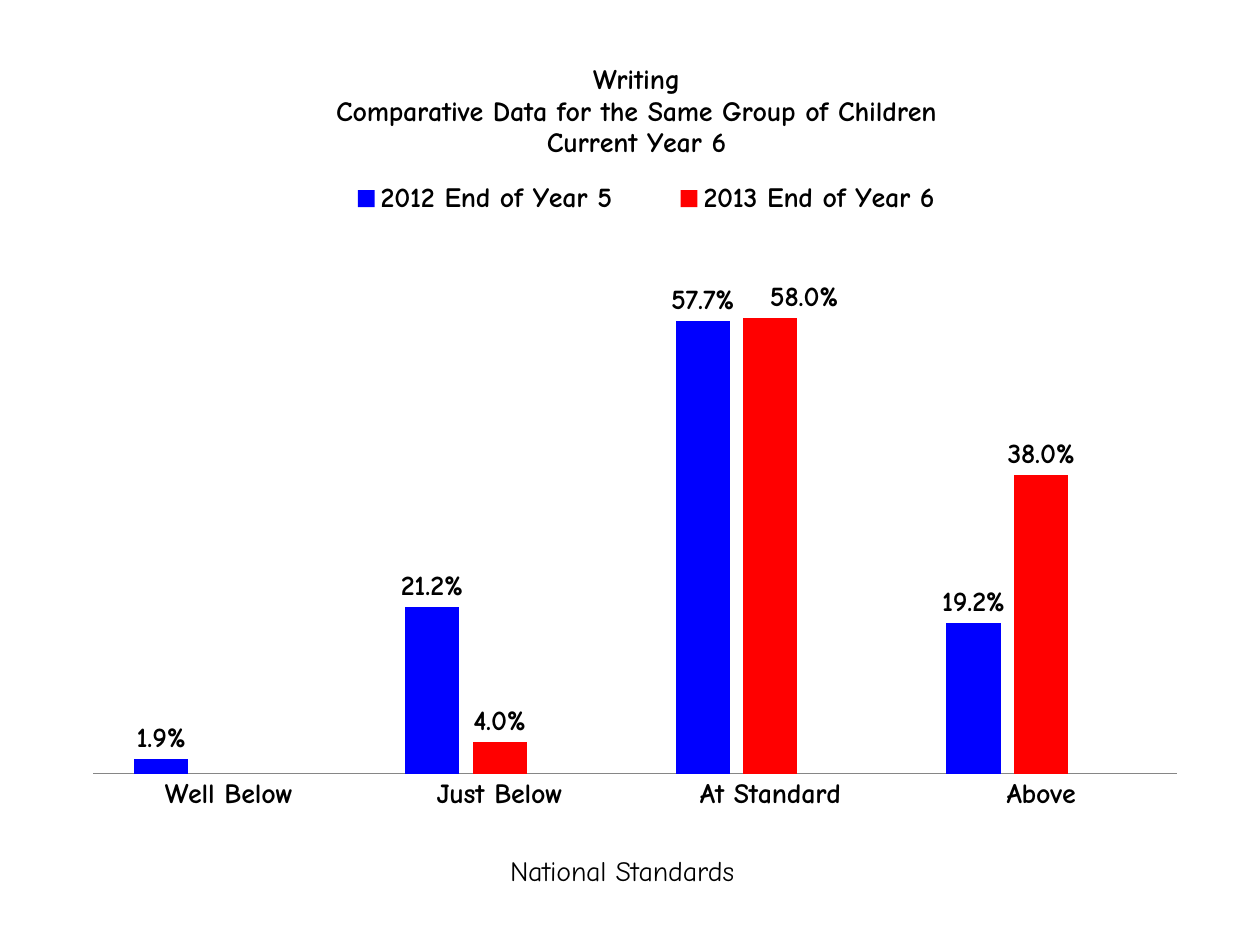
import dataclasses

import pptx
import pptx.chart.data
import pptx.dml.color
import pptx.enum.chart
import pptx.oxml
import pptx.oxml.ns
import pptx.util

Pt = pptx.util.Pt
qn = pptx.oxml.ns.qn


@dataclasses.dataclass(frozen=True)
class Theme:
    font: str = "Comic Neue"
    base_font: str = "Calibri"
    size: int = 16
    base_size: int = 10
    text: str = "000000"
    axis: str = "868686"
    series: tuple = ("0000FF", "FF0000", "9BBB59")


def rgb(value):
    return pptx.dml.color.RGBColor.from_string(value)


def format_font(font, name, size, color, bold=False):
    font.name = name
    font.size = Pt(size)
    font.bold = bold
    font.color.rgb = rgb(color)


def write(frame, text, **style):
    """Put each line of text in its own paragraph, formatted by style."""
    for index, line in enumerate(text.split("\n")):
        paragraph = frame.paragraphs[0] if index == 0 else frame.add_paragraph()
        run = paragraph.add_run()
        run.text = line
        format_font(run.font, **style)


def chart_xml(tag, content):
    namespace = pptx.oxml.ns.nsdecls("c")
    return pptx.oxml.parse_xml(f"<c:{tag} {namespace}>{content}</c:{tag}>")


def place(element, after=None, target=None, mode="edge", **fractions):
    """Give a chart part a manual layout in fractions of the chart."""
    for old in element.findall(qn("c:layout")):
        element.remove(old)
    parts = [f'<c:layoutTarget val="{target}"/>'] if target else []
    parts += [f'<c:{axis}Mode val="{mode}"/>' for axis in "xy"]
    parts += [f'<c:{key} val="{value}"/>' for key, value in fractions.items()]
    layout = chart_xml("layout", f"<c:manualLayout>{''.join(parts)}</c:manualLayout>")
    if after is None:
        element.insert(0, layout)
    else:
        element.find(qn(after)).addnext(layout)


class Deck:
    def __init__(self, theme):
        self.theme = theme
        self.presentation = pptx.Presentation()
        self.presentation.slide_width = Pt(720)
        self.presentation.slide_height = Pt(540)
        self.slide = self.presentation.slides.add_slide(
            self.presentation.slide_layouts[6])

    def style(self, bold=True):
        return dict(name=self.theme.font, size=self.theme.size,
                    color=self.theme.text, bold=bold)

    def column_chart(self, categories, series, left, top, width, height):
        data = pptx.chart.data.CategoryChartData(number_format="0.0%")
        data.categories = categories
        for name, values in series.items():
            data.add_series(name, values)
        chart = self.slide.shapes.add_chart(
            pptx.enum.chart.XL_CHART_TYPE.COLUMN_CLUSTERED,
            Pt(left), Pt(top), Pt(width), Pt(height), data).chart
        format_font(chart.font, self.theme.base_font, self.theme.base_size,
                    self.theme.text)
        plot = chart.plots[0]
        plot.vary_by_categories = False
        plot.gap_width = 150
        plot.overlap = -25
        for columns, color in zip(plot.series, self.theme.series):
            columns.format.fill.solid()
            columns.format.fill.fore_color.rgb = rgb(color)
            columns.invert_if_negative = False
            self.value_labels(columns.data_labels)
        place(chart._chartSpace.chart.plotArea, target="inner",
              x=0.017, y=0.224, w=0.966, h=0.622)
        return chart

    def value_labels(self, labels):
        labels.show_value = True
        labels.number_format = "0.0%"
        labels.number_format_is_linked = False
        labels.position = pptx.enum.chart.XL_LABEL_POSITION.OUTSIDE_END
        format_font(labels.font, **self.style())

    def moved_label(self, point, x, y):
        label = point.data_label
        format_font(label.font, **self.style())
        label.position = pptx.enum.chart.XL_LABEL_POSITION.OUTSIDE_END
        place(label._dLbl, "c:idx", mode="factor", x=x, y=y)

    def title(self, owner, text, x, y, bold):
        """Title a chart or an axis."""
        title = owner.chart_title if hasattr(owner, "chart_title") else owner.axis_title
        write(title.text_frame, text, **self.style(bold))
        place(title._element, "c:tx", x=x, y=y)

    def axes(self, chart, maximum):
        values = chart.value_axis
        values.minimum_scale = 0
        values.maximum_scale = maximum
        values.has_major_gridlines = False
        values.visible = False
        standards = chart.category_axis
        standards.major_tick_mark = pptx.enum.chart.XL_TICK_MARK.NONE
        standards.format.line.color.rgb = rgb(self.theme.axis)
        standards.format.line.width = Pt(0.75)
        format_font(standards.tick_labels.font, **self.style())

    def legend(self, chart, hidden, **fractions):
        chart.has_legend = True
        legend = chart.legend
        legend.position = pptx.enum.chart.XL_LEGEND_POSITION.TOP
        legend.include_in_layout = False
        format_font(legend.font, **self.style())
        place(legend._element, "c:legendPos", **fractions)
        entry = chart_xml("legendEntry",
                          f'<c:idx val="{hidden}"/><c:delete val="1"/>')
        legend._element.find(qn("c:legendPos")).addnext(entry)


def main():
    deck = Deck(Theme())
    standards = ["Well Below", "Just Below", "At Standard", "Above"]
    results = {
        "2012 End of Year 5": (0.019, 0.212, 0.577, 0.192),
        "2013 End of Year 6": (None, 0.04, 0.58, 0.38),
        "Series 3": (None,) * 4,  # empty third column keeps the bar spacing
    }
    chart = deck.column_chart(standards, results, 42.5, 15.1, 640.8, 504.7)
    deck.axes(chart, maximum=0.7)
    deck.title(chart, "Writing\nComparative Data for the Same Group of Children\n"
               "Current Year 6", x=0.23, y=0.036, bold=True)
    deck.title(chart.category_axis, "National Standards", x=0.384, y=0.93, bold=False)
    deck.legend(chart, hidden=2, x=0.2, y=0.17, w=0.62, h=0.05)
    deck.moved_label(chart.plots[0].series[1].points[2], x=0.03, y=0)
    deck.presentation.save("out.pptx")


if __name__ == "__main__":
    main()
